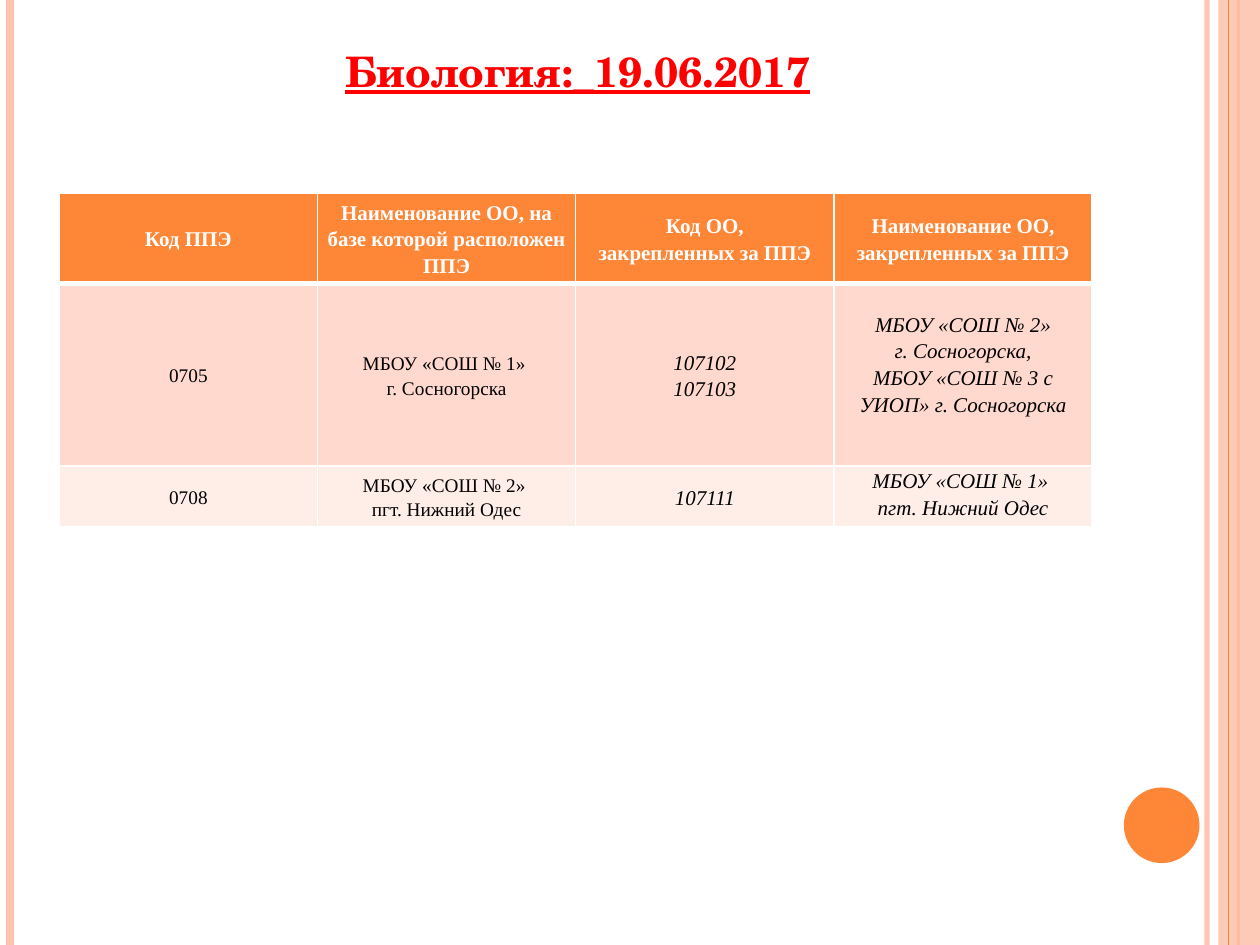
from dataclasses import dataclass

from lxml.etree import SubElement
from pptx import Presentation
from pptx.dml.color import RGBColor
from pptx.enum.shapes import MSO_CONNECTOR, MSO_SHAPE
from pptx.enum.text import MSO_ANCHOR, MSO_AUTO_SIZE, PP_ALIGN
from pptx.oxml.ns import qn
from pptx.util import Inches, Pt


@dataclass(frozen=True)
class Theme:
    accent: RGBColor = RGBColor.from_string("FE8637")
    pale: RGBColor = RGBColor.from_string("FEC3AE")
    title: RGBColor = RGBColor.from_string("FF0000")
    white: RGBColor = RGBColor.from_string("FFFFFF")
    black: RGBColor = RGBColor.from_string("000000")
    bands: tuple = (RGBColor.from_string("FFD9CE"), RGBColor.from_string("FFEDE8"))
    title_font: str = "TeX Gyre Schola"
    table_font: str = "Times New Roman"
    title_size: int = 24
    large: int = 12
    small: int = 11


theme = Theme()


def set_alpha(fill_parent, percent):
    """Make the solid fill inside an element partly transparent."""
    color = fill_parent.find(qn("a:solidFill"))[0]
    SubElement(color, qn("a:alpha")).set("val", str(percent * 1000))


def add_border(cell, side, width):
    """Draw one white cell border; call before the cell is filled."""
    ln = SubElement(cell._tc.get_or_add_tcPr(), qn(f"a:ln{side}"))
    ln.set("w", str(Pt(width)))
    fill = SubElement(ln, qn("a:solidFill"))
    SubElement(fill, qn("a:srgbClr")).set("val", str(theme.white))


prs = Presentation()
prs.slide_width, prs.slide_height = Inches(10), Inches(7.5)
s = prs.slides.add_slide(prs.slide_layouts[5])

# Vertical stripes: x, colour, width, opacity; the side band lies under the last
stripes = [
    (9.58, theme.pale, 3, 93),
    (0.08, theme.pale, 4.5, 100),
    (9.83, theme.accent, 1.5, 100),
    (9.75, theme.accent, 0.75, 100),
]
for i, (x, color, width, alpha) in enumerate(stripes):
    if i == len(stripes) - 1:
        band = s.shapes.add_shape(MSO_SHAPE.RECTANGLE, Inches(9.67), 0,
                                  Inches(0.33), prs.slide_height)
        band.shadow.inherit = False
        band.fill.solid()
        band.fill.fore_color.rgb = theme.pale
        set_alpha(band._element.spPr, 87)
        band.line.fill.background()
    line = s.shapes.add_connector(MSO_CONNECTOR.STRAIGHT, Inches(x), 0,
                                  Inches(x), prs.slide_height)
    line.line.color.rgb = color
    line.line.width = Pt(width)
    if alpha < 100:
        set_alpha(line.line._ln, alpha)
    SubElement(line._element.spPr, qn("a:effectLst"))

# Corner circle
circle = s.shapes.add_shape(MSO_SHAPE.OVAL, Inches(8.92), Inches(6.25),
                            Inches(0.6), Inches(0.6))
circle.shadow.inherit = False
circle.fill.solid()
circle.fill.fore_color.rgb = theme.accent
circle.line.fill.background()

# Title
title = s.shapes.title
title.left, title.top = Inches(0.5), Inches(0.31)
title.width, title.height = Inches(8.17), Inches(6.77)
tf = title.text_frame
tf.word_wrap = True
tf.auto_size = MSO_AUTO_SIZE.NONE
tf.vertical_anchor = MSO_ANCHOR.TOP
p = tf.paragraphs[0]
p.alignment = PP_ALIGN.CENTER
p.space_before = Pt(6)
r = p.add_run()
r.text = "Биология:_19.06.2017"
r.font.name = theme.title_font
r.font.size = Pt(theme.title_size)
r.font.color.rgb = theme.title
r.font.bold = r.font.underline = True

# Table: each cell is a list of paragraphs
rows = [
    [["Код ППЭ"],
     ["Наименование ОО, на базе которой расположен ППЭ"],
     ["Код ОО,", "закрепленных за ППЭ"],
     ["Наименование ОО, закрепленных за ППЭ"]],
    [["0705"],
     ["МБОУ «СОШ № 1» ", "г. Сосногорска"],
     ["107102", "107103"],
     ["МБОУ «СОШ № 2»", " г. Сосногорска, ",
      "МБОУ «СОШ № 3 с УИОП» г. Сосногорска"]],
    [["0708"],
     ["МБОУ «СОШ № 2» ", "пгт. Нижний Одес"],
     ["107111"],
     ["МБОУ «СОШ № 1» ", "пгт. Нижний Одес"]],
]
row_heights = [0.72, 1.45, 0.48]
table = s.shapes.add_table(len(rows), 4, Inches(0.47), Inches(1.53),
                           Inches(8.2), Inches(sum(row_heights))).table
for column in table.columns:
    column.width = Inches(2.05)
for row, height in zip(table.rows, row_heights):
    row.height = Inches(height)

for i, row in enumerate(rows):
    header = i == 0
    for j, lines in enumerate(row):
        cell = table.cell(i, j)
        for side in "LRTB":
            thick = (header and side == "B") or (i == 1 and side == "T")
            add_border(cell, side, 3 if thick else 1)
        cell.fill.solid()
        cell.fill.fore_color.rgb = theme.accent if header else theme.bands[i - 1]
        cell.margin_left = cell.margin_right = Inches(0.07)
        cell.margin_top = cell.margin_bottom = 0
        cell.vertical_anchor = MSO_ANCHOR.MIDDLE
        if j == 3 and not header:
            cell.vertical_anchor = MSO_ANCHOR.TOP
            cell.margin_top = Inches(0.21 if i == 1 else 0)
        tf = cell.text_frame
        for k, text in enumerate(lines):
            p = tf.paragraphs[0] if k == 0 else tf.add_paragraph()
            p.alignment = PP_ALIGN.CENTER
            p.line_spacing = 1.15
            r = p.add_run()
            r.text = text
            r.font.name = theme.table_font
            r.font.size = Pt(theme.large if header or j >= 2 else theme.small)
            r.font.color.rgb = theme.white if header else theme.black
            r.font.bold = header
            r.font.italic = not header and j >= 2

prs.save("out.pptx")
